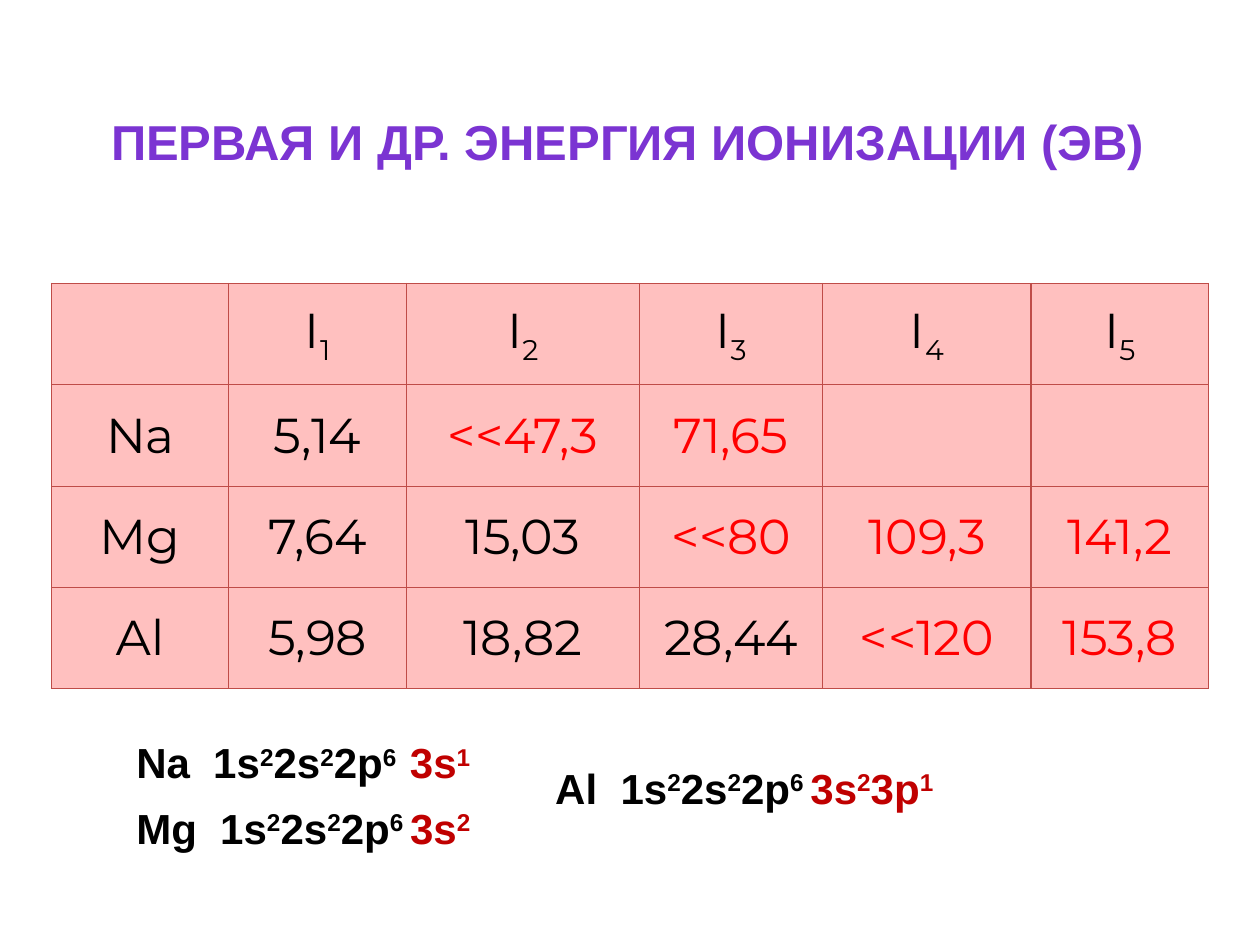
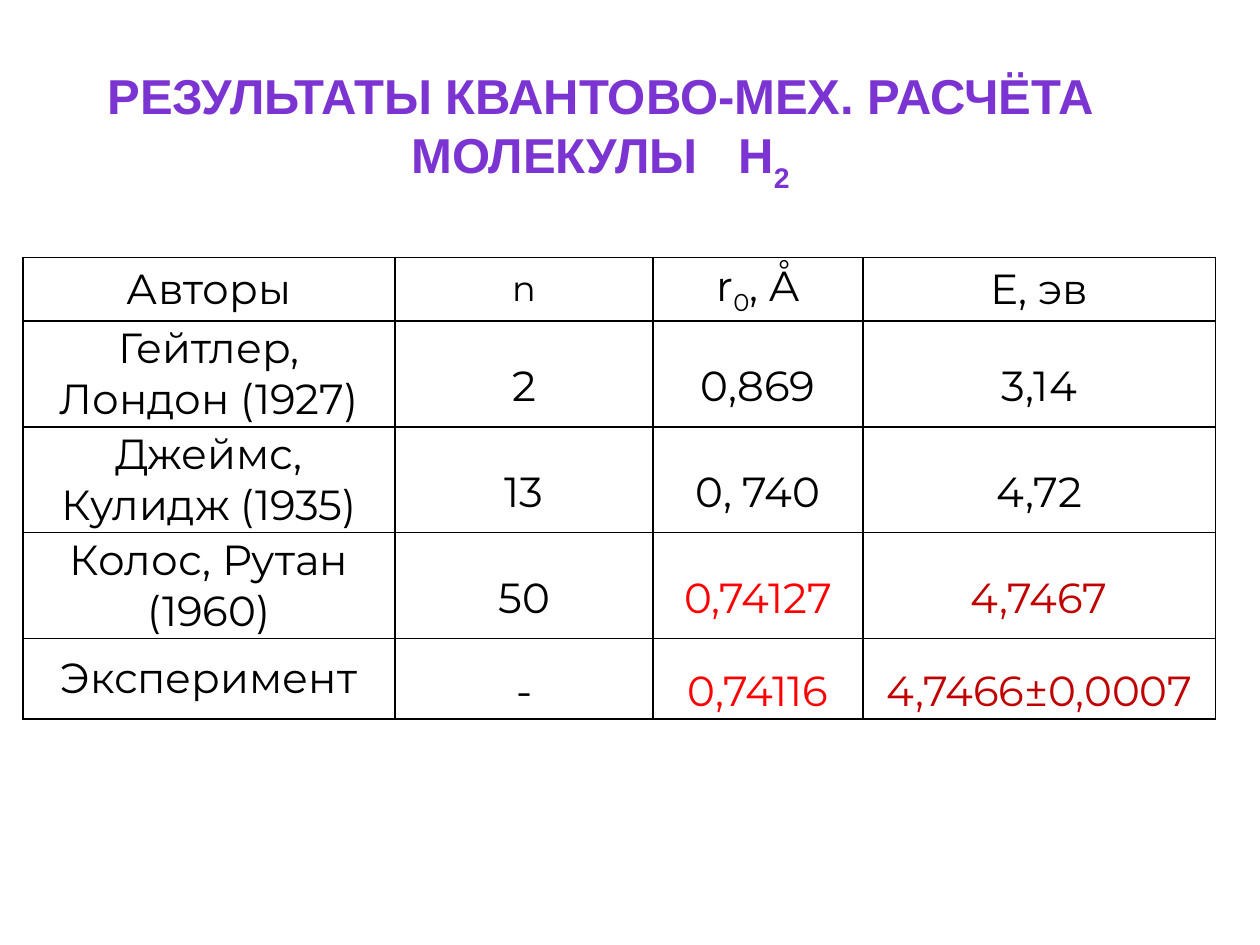
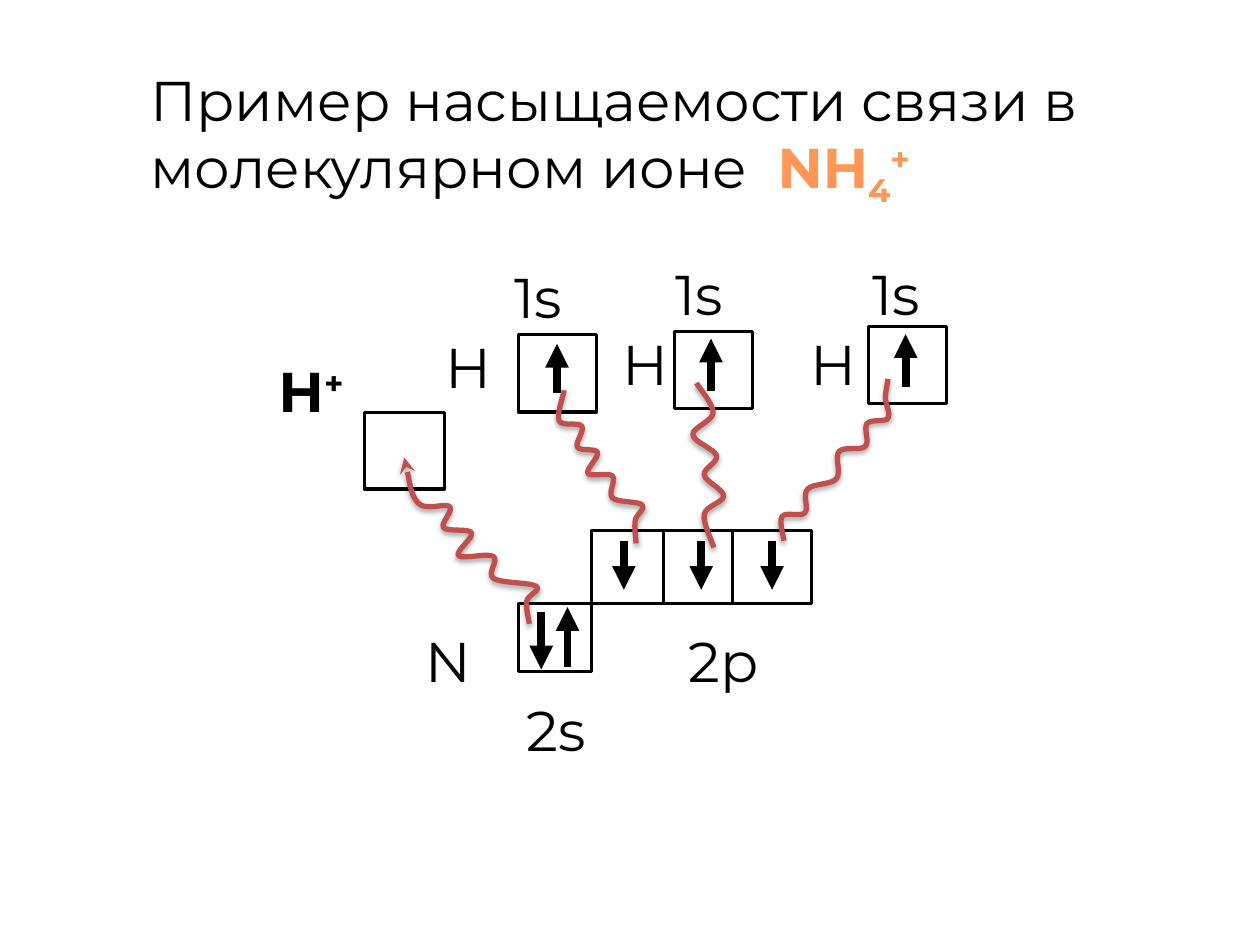
from lxml.etree import SubElement
from pptx import Presentation
from pptx.dml.color import RGBColor
from pptx.enum.shapes import MSO_CONNECTOR, MSO_SHAPE
from pptx.enum.text import MSO_ANCHOR, MSO_AUTO_SIZE, PP_ALIGN
from pptx.oxml.ns import qn
from pptx.util import Pt

HEADING_FONT, BODY_FONT = "Arial", "Montserrat"
BLACK, WHITE, RED, DARK_RED = "000000", "FFFFFF", "FF0000", "C00000"
PURPLE, ORANGE, WAVE_RED = "7B34D2", "FF9856", "C0504D"
PINK, PINK_BORDER = "FFC0BF", "BF4C48"
SUBSCRIPT, SUPERSCRIPT = -25000, 30000


def write(paragraph, text, size, font=BODY_FONT, colour=BLACK, bold=False, shift=SUBSCRIPT):
    paragraph.font.size = Pt(size)
    paragraph.font.name = font
    paragraph.font.bold = bold
    for index, piece in enumerate(text.split("|")):
        if piece:
            run = paragraph.add_run()
            run.text = piece
            run.font.color.rgb = RGBColor.from_string(colour)
            if index % 2:
                run.font._element.set("baseline", str(shift))


def style_line(shape, colour, width, arrow=None, kind="triangle"):
    shape.line.color.rgb = RGBColor.from_string(colour)
    shape.line.width = Pt(width)
    properties = shape._element.spPr
    if arrow:
        SubElement(properties.find(qn("a:ln")), qn(f"a:{arrow}"), type=kind)
    return SubElement(properties, qn("a:effectLst"))


presentation = Presentation()
presentation.slide_width, presentation.slide_height = Pt(720), Pt(540)

title_areas = [
    (56.3, 60, 608, 41, MSO_ANCHOR.MIDDLE, PP_ALIGN.LEFT),
    (50.4, 34, 585.5, 75, MSO_ANCHOR.TOP, PP_ALIGN.CENTER),
    (78.7, 33.8, 579.5, 85, MSO_ANCHOR.TOP, PP_ALIGN.LEFT),
]
slides, titles = [], []
for left, top, width, height, anchor, alignment in title_areas:
    slide = presentation.slides.add_slide(presentation.slide_layouts[5])
    title = slide.shapes.title
    title.left, title.top, title.width, title.height = Pt(left), Pt(top), Pt(width), Pt(height)
    title.text_frame.auto_size = MSO_AUTO_SIZE.NONE
    title.text_frame.word_wrap = True
    title.text_frame.vertical_anchor = anchor
    paragraph = title.text_frame.paragraphs[0]
    paragraph.alignment = alignment
    slides.append(slide)
    titles.append(paragraph)
ionization_slide, hydrogen_slide, ammonium_slide = slides

write(titles[0], "ПЕРВАЯ И ДР. ЭНЕРГИЯ ИОНИЗАЦИИ (ЭВ)", 28, HEADING_FONT, PURPLE, True)
write(titles[1], "РЕЗУЛЬТАТЫ КВАНТОВО-МЕХ. РАСЧЁТА МОЛЕКУЛЫ   Н|2", 28, HEADING_FONT, PURPLE, True, -30000)
write(titles[2], "Пример насыщаемости связи в молекулярном ионе  ", 32)
for text, shift in [("NH|4", SUBSCRIPT), ("|+", SUPERSCRIPT)]:
    write(titles[2], text, 32, colour=ORANGE, shift=shift)
for run in titles[2].runs[1:]:
    run.font.bold = True

ionization_rows = [
    ["", "І|1", "І|2", "І|3", "І|4", "І|5"],
    ["Nа", "5,14", "<<47,3", "71,65", "", ""],
    ["Мg", "7,64", "15,03", "<<80", "109,3", "141,2"],
    ["Аl", "5,98", "18,82", "28,44", "<<120", "153,8"],
]
hydrogen_rows = [
    ["Авторы", "n", "r|0|, Å", "Е, эв"],
    ["Гейтлер, Лондон (1927)", "2", "0,869", "3,14"],
    ["Джеймс, Кулидж (1935)", "13", "0, 740", "4,72"],
    ["Колос, Рутан (1960)", "50", "0,74127", "4,7467"],
    ["Эксперимент", "-", "0,74116", "4,7466±0,0007"],
]
core_electrons = {(row, column): RED for row in range(1, 4) for column in range(row + 1, 6)}
best_values = {(row, column): colour for row in (3, 4) for column, colour in [(2, RED), (3, DARK_RED)]}
tables = [
    (ionization_slide, 29.4, 162, [101.4, 101.4, 133.2, 104.8, 119, 101.4], [57.9] * 4,
     ionization_rows, 28, core_electrons, PINK, PINK_BORDER, 0.75, 0, 1),
    (hydrogen_slide, 13.1, 147, [212.6, 147.5, 120, 201.5], [36.5, 60.4, 60.4, 60.4, 46],
     hydrogen_rows, 24, best_values, None, BLACK, 1, 0.95, 1.5),
]
for (slide, left, top, widths, heights, rows, size, accents, fill,
     border, border_width, margin, spacing) in tables:
    table = slide.shapes.add_table(len(rows), len(widths), Pt(left), Pt(top),
                                   Pt(sum(widths)), Pt(sum(heights))).table
    table.first_row = table.horz_banding = False
    for column, width in zip(table.columns, widths):
        column.width = Pt(width)
    for row_index, (texts, height) in enumerate(zip(rows, heights)):
        table.rows[row_index].height = Pt(height)
        for column_index, text in enumerate(texts):
            cell = table.cell(row_index, column_index)
            cell.margin_left = cell.margin_right = Pt(5)
            cell.margin_top = cell.margin_bottom = Pt(margin)
            cell.vertical_anchor = MSO_ANCHOR.MIDDLE
            for side in ("lnL", "lnR", "lnT", "lnB"):
                edge = SubElement(cell._tc.get_or_add_tcPr(), qn(f"a:{side}"), w=str(Pt(border_width)))
                SubElement(SubElement(edge, qn("a:solidFill")), qn("a:srgbClr"), val=border)
            if fill:
                cell.fill.solid()
                cell.fill.fore_color.rgb = RGBColor.from_string(fill)
            else:
                cell.fill.background()
            paragraph = cell.text_frame.paragraphs[0]
            paragraph.alignment = PP_ALIGN.CENTER
            if row_index and column_index:
                paragraph.line_spacing = spacing
            write(paragraph, text, 20 if text == "n" else size,
                  colour=accents.get((row_index, column_index), BLACK))

configurations = [
    ("Na  1s|2|2s|2|2p|6  ", "3s|1", 70.8, 417.5, 213),
    ("Mg  1s|2|2s|2|2p|6 ", "3s|2", 70.8, 455, 213),
    ("Al  1s|2|2s|2|2p|6 ", "3s|2|3p|1", 310.2, 432, 239),
]
for core, valence, left, top, width in configurations:
    box = ionization_slide.shapes.add_textbox(Pt(left), Pt(top), Pt(width), Pt(36))
    box.text_frame.word_wrap = True
    paragraph = box.text_frame.paragraphs[0]
    for text, colour in [(core, BLACK), (valence, DARK_RED)]:
        write(paragraph, text, 24, HEADING_FONT, colour, True, SUPERSCRIPT)

orbitals = [
    (296.3, 191, 44.5, 44.5, None), (385.3, 189.5, 44.5, 44, None), (496.3, 186.5, 44.5, 44, None),
    (208.3, 235.5, 45.5, 44, WHITE), (296.3, 345, 42, 39, None), (338, 303, 126, 42, None),
]
for left, top, width, height, fill in orbitals:
    orbital = ammonium_slide.shapes.add_shape(MSO_SHAPE.RECTANGLE, Pt(left), Pt(top), Pt(width), Pt(height))
    if fill:
        orbital.fill.solid()
        orbital.fill.fore_color.rgb = RGBColor.from_string(fill)
    else:
        orbital.fill.background()
    style_line(orbital, BLACK, 1.75)

dividers = [(x, 303, 345, 1.75, None) for x in (379.3, 418.8)]
spins = [(x, tail, tip, 4.5, "tailEnd") for x, tail, tip in [
    (318.3, 224.5, 196.5), (406.3, 223.5, 193.5), (517.5, 221, 191),
    (309.3, 350, 382.5), (324.3, 381, 347),
    (356.5, 309, 337), (400.7, 309, 337), (441.2, 309, 337),
]]
for x, start, end, width, arrow in dividers + spins:
    connector = ammonium_slide.shapes.add_connector(MSO_CONNECTOR.STRAIGHT, Pt(x), Pt(start), Pt(x), Pt(end))
    style_line(connector, BLACK, width, arrow)

labels = [
    ("Н", 247.7, 186.5, 39.5, 43, 7.2, PP_ALIGN.LEFT),
    ("Н", 352.3, 186.5, 27.5, 34.5, 3.6, PP_ALIGN.LEFT),
    ("Н", 459.5, 186.5, 27.5, 34.5, 3.6, PP_ALIGN.LEFT),
    ("1s", 286.8, 146.4, 62, 34, 7.2, PP_ALIGN.LEFT),
    ("1s", 382.5, 146.4, 62, 34, 3.6, PP_ALIGN.LEFT),
    ("1s", 494.8, 146.4, 62, 34, 3.6, PP_ALIGN.LEFT),
    ("N", 236, 354.4, 40.5, 36, 7.2, PP_ALIGN.LEFT),
    ("2s", 287, 394, 62, 35, 7.2, PP_ALIGN.CENTER),
    ("2р", 376.8, 354.4, 73.5, 37.5, 7.2, PP_ALIGN.CENTER),
    ("Н|+", 152, 200, 56, 46, 7.2, PP_ALIGN.LEFT),
]
for text, left, top, width, height, margin, alignment in labels:
    label = ammonium_slide.shapes.add_textbox(Pt(left), Pt(top), Pt(width), Pt(height))
    frame = label.text_frame
    frame.word_wrap = True
    frame.margin_left = frame.margin_right = Pt(margin)
    frame.margin_top = frame.margin_bottom = Pt(margin / 2)
    frame.paragraphs[0].alignment = alignment
    write(frame.paragraphs[0], text, 32, bold="|" in text, shift=SUPERSCRIPT)

bonds = [
    (338.9, None, [(415.1, 219.7), (417.9, 239), (402.6, 246.5), (410.9, 262.6), (400.4, 270.3),
                   (406.4, 285.5), (392.3, 291.3), (390.6, 311)]),
    (0, None, [(507.5, 216.5), (506, 227.5), (507.5, 239), (495.5, 242), (494.5, 255), (479.5, 258),
               (478, 273.5), (461.5, 279.5), (460, 293), (447, 295), (448, 309)]),
    (0, None, [(322.5, 223), (319.5, 240.5), (332.5, 243.5), (330, 255.5), (341.5, 258.5), (336, 270.5),
               (350, 272), (350, 284.5), (367, 288.5), (363, 297.5), (363.5, 310.5)]),
    (0, "headEnd", [(231, 261.5), (239, 287.5), (257, 289.5), (253.5, 301.5), (269.5, 304.5),
                    (262, 317.5), (282, 318), (282, 330.5), (306.5, 335), (301, 343.5), (302.5, 356.5)]),
]
for rotation, arrow, points in bonds:
    bond = [(Pt(x), Pt(y)) for x, y in points]
    builder = ammonium_slide.shapes.build_freeform(*bond[0])
    builder.add_line_segments(bond[1:], close=False)
    wave = builder.convert_to_shape()
    wave.rotation = rotation
    wave.fill.background()
    knots = [(x - wave.left, y - wave.top) for x, y in [bond[0], *bond, bond[-1]]]
    segments = list(wave._element.iter(qn("a:lnTo")))
    for segment, before, start, end, after in zip(segments, knots, knots[1:], knots[2:], knots[3:]):
        leaving = [b + (c - a) / 6 for a, b, c in zip(before, start, end)]
        arriving = [c - (d - b) / 6 for b, c, d in zip(start, end, after)]
        curve = SubElement(segment.getparent(), qn("a:cubicBezTo"))
        for x, y in (leaving, arriving, end):
            SubElement(curve, qn("a:pt"), x=str(round(x)), y=str(round(y)))
        segment.getparent().remove(segment)
    effects = style_line(wave, WAVE_RED, 3, arrow, "stealth")
    shadow = SubElement(effects, qn("a:outerShdw"), blurRad=str(Pt(3.1)), dist=str(Pt(1.8)),
                        dir="5400000", rotWithShape="0")
    shadow_colour = SubElement(shadow, qn("a:srgbClr"), val=BLACK)
    SubElement(shadow_colour, qn("a:alpha"), val="35000")

presentation.save("out.pptx")
